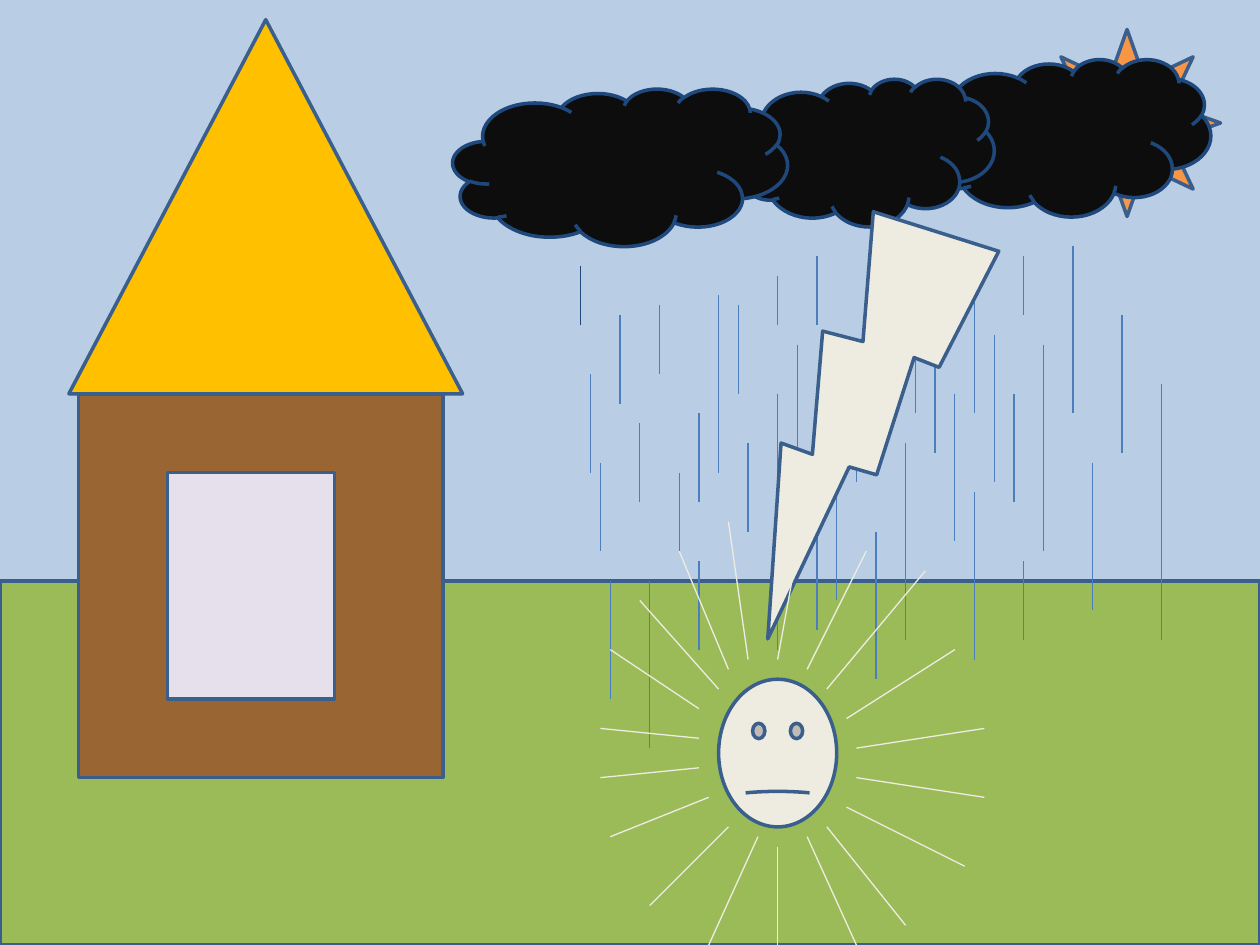
from dataclasses import dataclass
from typing import NamedTuple

from pptx import Presentation
from pptx.dml.color import RGBColor
from pptx.enum.shapes import MSO_CONNECTOR, MSO_SHAPE
from pptx.oxml.xmlchemy import OxmlElement
from pptx.util import Length, Pt

COLUMNS, ROWS = 128, 96
CELL = 720 / COLUMNS  # points


@dataclass(frozen=True)
class Theme:
    sky: str = "B9CDE5"
    grass: str = "9BBB59"
    wall: str = "996633"
    roof: str = "FFC000"
    window: str = "E6E0EC"
    sun: str = "F79646"
    cloud: str = "0D0D0D"
    light: str = "EEECE1"
    outline: str = "3A5F8C"
    dark_blue: str = "1F497D"
    rain: str = "4B7EBC"
    outline_width: float = 2
    stroke_width: float = 0.75


THEME = Theme()


class Figure(NamedTuple):
    """A preset shape; its frame is in grid cells."""
    preset: MSO_SHAPE
    left: float
    top: float
    width: float
    height: float
    fill: str
    outline: str = THEME.outline
    rotation: float = 0
    adjustment: float | None = None


class Stroke(NamedTuple):
    """A thin straight line between two grid points."""
    x1: int
    y1: int
    x2: int
    y2: int
    color: str


def cloud(left: int, top: int, width: int, height: int) -> Figure:
    return Figure(MSO_SHAPE.CLOUD, left, top, width, height, THEME.cloud, THEME.dark_blue)


SCENERY = [
    Figure(MSO_SHAPE.RECTANGLE, 0, 59, COLUMNS, ROWS - 59, THEME.grass),
    Figure(MSO_SHAPE.RECTANGLE, 8, 40, 37, 39, THEME.wall),
    Figure(MSO_SHAPE.ISOSCELES_TRIANGLE, 7, 2, 40, 38, THEME.roof),
    Figure(MSO_SHAPE.RECTANGLE, 17, 48, 17, 23, THEME.window),
    Figure(MSO_SHAPE.SUN, 105, 3, 19, 19, THEME.sun),
    cloud(94, 6, 29, 16),
    Figure(MSO_SHAPE.SMILEY_FACE, 73, 69, 12, 15, THEME.light, adjustment=-0.005),
    cloud(75, 8, 26, 15),
    cloud(46, 9, 34, 16),
]
LIGHTNING = Figure(MSO_SHAPE.LIGHTNING_BOLT, 72.45, 19.58, 27.9, 42.6, THEME.light, rotation=52.5)

# Raindrops: column, top row, bottom row
FIRST_DROP = (59, 27, 33)
DROPS = [
    (63, 32, 41), (75, 31, 40), (73, 30, 48), (83, 26, 33), (79, 28, 33),
    (67, 31, 38), (109, 25, 42), (104, 26, 32), (79, 40, 49), (65, 43, 51),
    (69, 48, 56), (71, 42, 51), (76, 45, 54), (89, 28, 38), (95, 29, 46),
    (93, 30, 42), (99, 26, 42), (85, 39, 61), (87, 39, 49), (81, 35, 52),
    (92, 45, 65), (97, 40, 55), (101, 34, 49), (106, 35, 56), (103, 40, 51),
    (89, 54, 69), (79, 53, 66), (66, 59, 76), (60, 38, 48), (61, 47, 56),
    (71, 57, 66), (99, 50, 67), (83, 52, 64), (62, 59, 71), (114, 32, 46),
    (111, 47, 62), (104, 57, 65), (118, 39, 65),
]

# Rays around the face: inner point, outer point
RAYS = [
    (86, 73, 97, 66), (87, 76, 100, 74), (84, 70, 94, 58), (87, 79, 100, 81),
    (86, 82, 98, 88), (84, 84, 92, 94), (82, 85, 87, 96), (82, 68, 88, 56),
    (79, 67, 81, 56), (76, 67, 74, 53), (74, 68, 69, 56), (73, 70, 65, 61),
    (71, 72, 62, 66), (71, 75, 61, 74), (71, 78, 61, 79), (72, 81, 62, 85),
    (74, 84, 66, 92), (77, 85, 72, 96), (79, 86, 79, 96),
]


def grid(cells: float) -> Length:
    return Pt(cells * CELL)


def rgb(color: str) -> RGBColor:
    return RGBColor.from_string(color)


def raindrop(column: int, top: int, bottom: int, color: str = THEME.rain) -> Stroke:
    return Stroke(column, top, column, bottom, color)


def draw_figure(slide, figure: Figure) -> None:
    frame = (figure.left, figure.top, figure.width, figure.height)
    shape = slide.shapes.add_shape(figure.preset, *map(grid, frame))
    shape.shadow.inherit = False
    shape.fill.solid()
    shape.fill.fore_color.rgb = rgb(figure.fill)
    shape.line.color.rgb = rgb(figure.outline)
    shape.line.width = Pt(THEME.outline_width)
    shape.rotation = figure.rotation
    if figure.adjustment is not None:
        shape.adjustments[0] = figure.adjustment


def draw_stroke(slide, stroke: Stroke) -> None:
    ends = map(grid, (stroke.x1, stroke.y1, stroke.x2, stroke.y2))
    connector = slide.shapes.add_connector(MSO_CONNECTOR.STRAIGHT, *ends)
    connector.line.color.rgb = rgb(stroke.color)
    connector.line.width = Pt(THEME.stroke_width)
    connector._element.spPr.append(OxmlElement("a:effectLst"))


def main() -> None:
    presentation = Presentation()
    presentation.slide_width = grid(COLUMNS)
    presentation.slide_height = grid(ROWS)
    slide = presentation.slides.add_slide(presentation.slide_layouts[6])
    slide.background.fill.solid()
    slide.background.fill.fore_color.rgb = rgb(THEME.sky)

    for figure in SCENERY:
        draw_figure(slide, figure)
    draw_stroke(slide, raindrop(*FIRST_DROP, THEME.dark_blue))
    for drop in DROPS:
        draw_stroke(slide, raindrop(*drop))
    draw_figure(slide, LIGHTNING)
    for ray in RAYS:
        draw_stroke(slide, Stroke(*ray, THEME.light))

    presentation.save("out.pptx")


if __name__ == "__main__":
    main()
